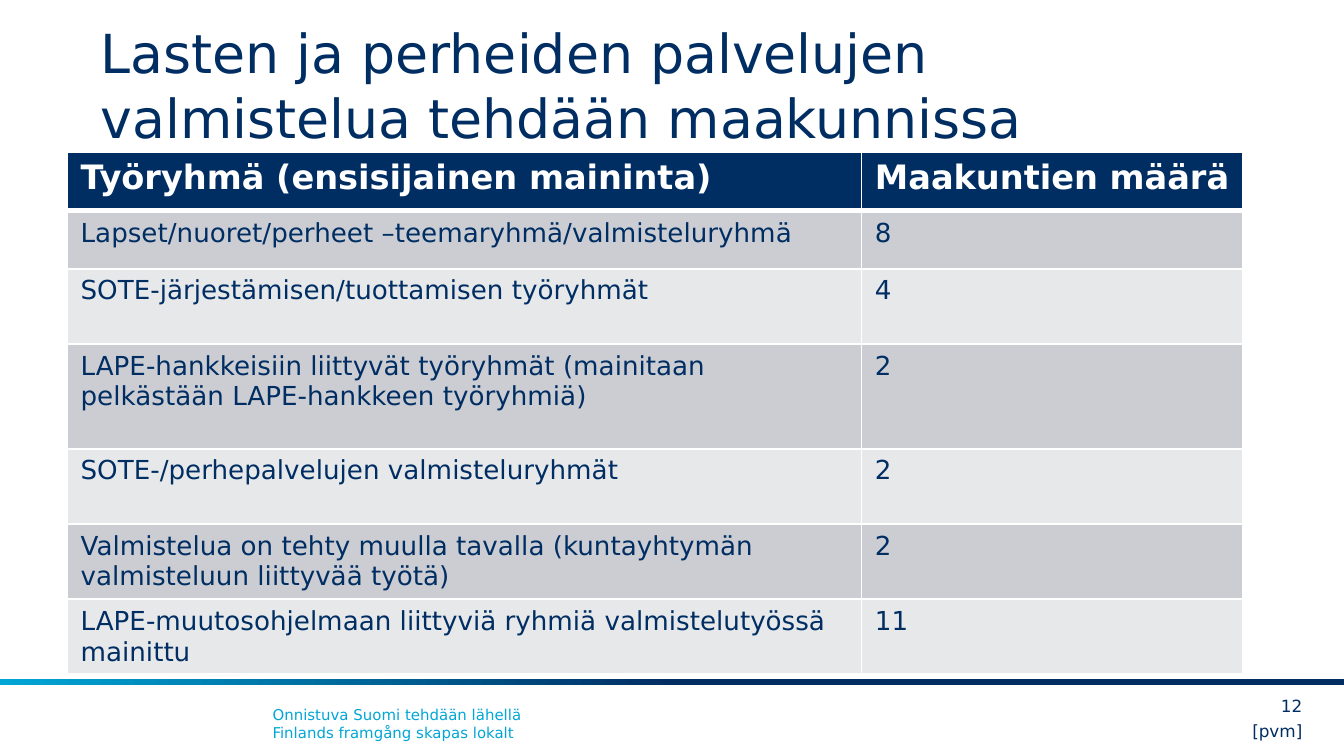
from typing import NamedTuple

from lxml import etree
from pptx import Presentation
from pptx import util as u
from pptx.dml.color import RGBColor
from pptx.enum import shapes, text
from pptx.oxml.ns import qn

FONT = "DejaVu Sans"
NAVY, CYAN, WHITE = "002E63", "00A6D6", "FFFFFF"
BANDS = ("CCCDD3", "E7E8EA")


class Row(NamedTuple):
    group: str
    count: str
    height: float


class Label(NamedTuple):
    words: str
    box: tuple[float, float, float, float]
    size: float
    color: str
    inset: tuple[float, float]
    align: text.PP_ALIGN = text.PP_ALIGN.LEFT
    anchor: text.MSO_ANCHOR = text.MSO_ANCHOR.TOP


ROWS = [
    Row("Työryhmä (ensisijainen maininta)", "Maakuntien määrä", 0.44),
    Row("Lapset/nuoret/perheet –teemaryhmä/valmisteluryhmä", "8", 0.43),
    Row("SOTE-järjestämisen/tuottamisen työryhmät", "4", 0.56),
    Row("LAPE-hankkeisiin liittyvät työryhmät (mainitaan pelkästään "
        "LAPE-hankkeen työryhmiä)", "2", 0.78),
    Row("SOTE-/perhepalvelujen valmisteluryhmät", "2", 0.56),
    Row("Valmistelua on tehty muulla tavalla (kuntayhtymän valmisteluun "
        "liittyvää työtä)", "2", 0.56),
    Row("LAPE-muutosohjelmaan liittyviä ryhmiä valmistelutyössä mainittu", "11", 0.55),
]
COLUMNS = (5.91, 2.84)

TITLE = Label("Lasten ja perheiden palvelujen valmistelua tehdään maakunnissa",
              (0.75, 0.23, 8.5, 0.93), 28.8, NAVY, (0, 0.05),
              anchor=text.MSO_ANCHOR.BOTTOM)
FOOTERS = [
    Label("Onnistuva Suomi tehdään lähellä\vFinlands framgång skapas lokalt",
          (1.93, 5.2, 6.54, 0.37), 8, CYAN, (0.1, 0.05)),
    Label("[pvm]", (8.7, 5.33, 0.99, 0.22), 9, NAVY, (0, 0),
          text.PP_ALIGN.RIGHT, text.MSO_ANCHOR.MIDDLE),
    Label("12", (9.26, 5.14, 0.43, 0.22), 9, NAVY, (0, 0),
          text.PP_ALIGN.RIGHT, text.MSO_ANCHOR.MIDDLE),
]


def rgb(color: str) -> RGBColor:
    return RGBColor.from_string(color)


def format_runs(frame, size: float, color: str, bold: bool = False) -> None:
    for paragraph in frame.paragraphs:
        for run in paragraph.runs:
            run.font.name = FONT
            run.font.size = u.Pt(size)
            run.font.bold = bold
            run.font.color.rgb = rgb(color)


def fill_label(shape, label: Label) -> None:
    shape.left, shape.top, shape.width, shape.height = map(u.Inches, label.box)
    frame = shape.text_frame
    frame.word_wrap = True
    frame.auto_size = text.MSO_AUTO_SIZE.NONE
    frame.vertical_anchor = label.anchor
    frame.margin_left = frame.margin_right = u.Inches(label.inset[0])
    frame.margin_top = frame.margin_bottom = u.Inches(label.inset[1])
    frame.paragraphs[0].text = label.words
    frame.paragraphs[0].alignment = label.align
    format_runs(frame, label.size, label.color)


def add_stripe(slide) -> None:
    stripe = slide.shapes.add_shape(shapes.MSO_SHAPE.RECTANGLE, 0, u.Inches(5.05),
                                    u.Inches(10), u.Inches(0.05))
    stripe.shadow.inherit = False
    stripe.line.fill.background()
    stripe.fill.gradient()
    stripe.fill.gradient_angle = 180
    for stop, position, color in zip(stripe.fill.gradient_stops, (0.5, 1), (NAVY, CYAN)):
        stop.position = position
        stop.color.rgb = rgb(color)


def set_borders(cell, bottom: float) -> None:
    """Draw white cell borders, 1 pt except for the bottom one."""
    properties = cell._tc.get_or_add_tcPr()
    widths = {"a:lnL": 1, "a:lnR": 1, "a:lnT": 1, "a:lnB": bottom}
    for index, (tag, width) in enumerate(widths.items()):
        line = etree.Element(qn(tag), w=str(u.Pt(width)))
        fill = etree.SubElement(line, qn("a:solidFill"))
        etree.SubElement(fill, qn("a:srgbClr"), val=WHITE)
        properties.insert(index, line)


def add_group_table(slide) -> None:
    height = sum(row.height for row in ROWS)
    table = slide.shapes.add_table(len(ROWS), len(COLUMNS), u.Inches(0.5), u.Inches(1.13),
                                   u.Inches(sum(COLUMNS)), u.Inches(height)).table
    for column, width in zip(table.columns, COLUMNS):
        column.width = u.Inches(width)
    for index, row in enumerate(ROWS):
        header = index == 0
        table.rows[index].height = u.Inches(row.height)
        for cell, words in zip(table.rows[index].cells, (row.group, row.count)):
            cell.text_frame.text = words
            format_runs(cell.text_frame, 18 if header else 14,
                        WHITE if header else NAVY, header)
            cell.fill.solid()
            cell.fill.fore_color.rgb = rgb(NAVY if header else BANDS[(index - 1) % 2])
            set_borders(cell, 3 if header else 1)


def main() -> None:
    presentation = Presentation()
    presentation.slide_width = u.Inches(10)
    presentation.slide_height = presentation.slide_width * 9 // 16
    slide = presentation.slides.add_slide(presentation.slide_layouts[5])
    add_stripe(slide)
    fill_label(slide.shapes.title, TITLE)
    for label in FOOTERS:
        fill_label(slide.shapes.add_textbox(0, 0, 0, 0), label)
    add_group_table(slide)
    presentation.save("out.pptx")


if __name__ == "__main__":
    main()
